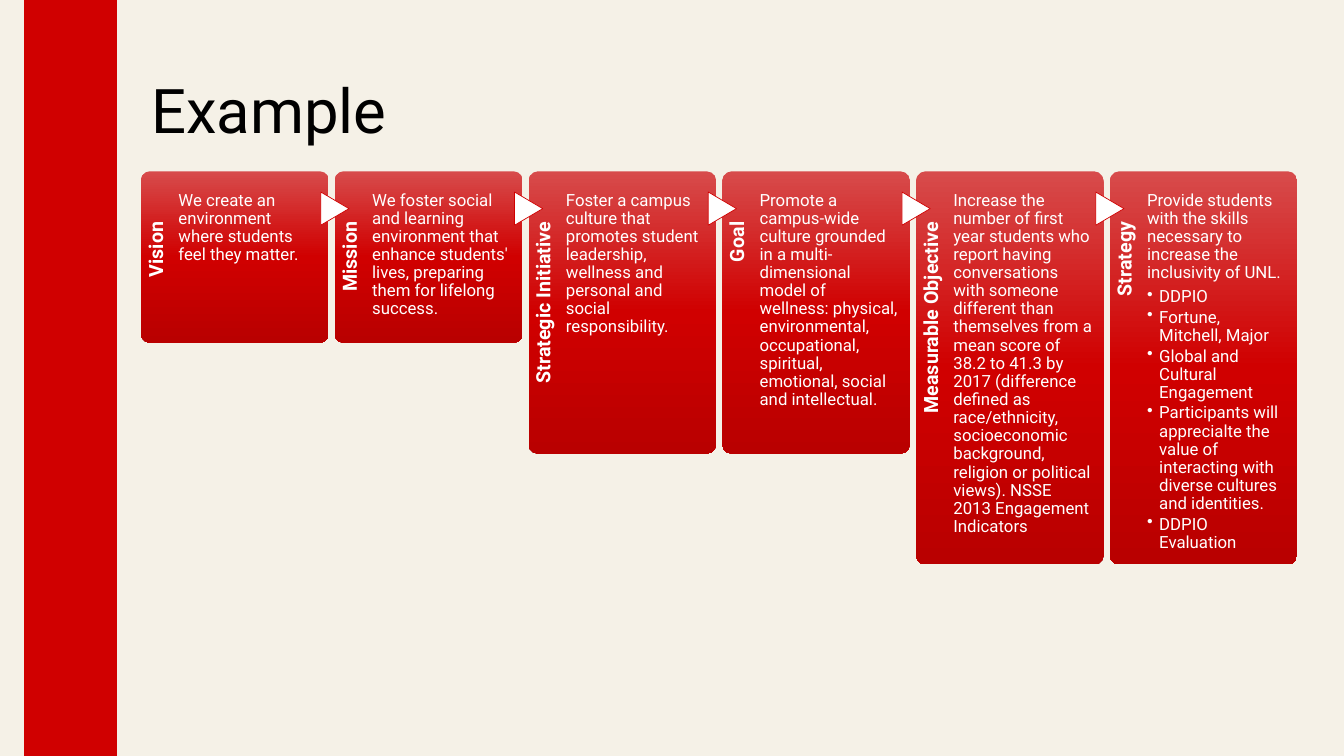
import copy
from dataclasses import dataclass

import lxml.etree
import pptx
import pptx.dml.color
import pptx.enum.shapes
import pptx.enum.text
import pptx.oxml.ns
import pptx.util

Inches = pptx.util.Inches
SHAPES = pptx.enum.shapes.MSO_SHAPE
ALIGN = pptx.enum.text.PP_ALIGN
ANCHOR = pptx.enum.text.MSO_ANCHOR


@dataclass(frozen=True)
class Theme:
    font: str = "Roboto"
    cream: str = "F5F1E7"
    red: str = "D00000"
    white: str = "FFFFFF"
    black: str = "000000"
    card_gradient: tuple = ((0, "D74B4B"), (0.5, "D00000"), (1, "B90000"))
    title_size: int = 44
    label_size: int = 14
    body_size: int = 12


THEME = Theme()

# Card row: left edge, top, width and distance between cards
ROW_LEFT, ROW_TOP, CARD_WIDTH, CARD_STEP = 1.4, 1.7, 1.86, 1.922

# Label, card height, text, bullets
CARDS = [
    ("Vision", 1.7, "We create an environment where students feel they matter.", []),
    ("Mission", 1.7, "We foster social and learning environment that enhance students' lives, "
     "preparing them for lifelong success.", []),
    ("Strategic Initiative", 2.8, "Foster a campus culture that promotes student leadership, "
     "wellness and personal and social responsibility.", []),
    ("Goal", 2.8, "Promote a campus-wide culture grounded in a multi-dimensional model of "
     "wellness: physical, environmental, occupational, spiritual, emotional, social and "
     "intellectual.", []),
    ("Measurable Objective", 3.9, "Increase the number of first year students who report having "
     "conversations with someone different than themselves from a mean score of 38.2 to 41.3 by "
     "2017 (difference defined as race/ethnicity, socioeconomic background, religion or "
     "political views). NSSE 2013 Engagement Indicators", []),
    ("Strategy", 3.9, "Provide students with the skills necessary to increase the inclusivity "
     "of UNL.", [
         "DDPIO",
         "Fortune, Mitchell, Major",
         "Global and Cultural Engagement",
         "Participants will apprecialte the value of interacting with diverse cultures and "
         "identities.",
         "DDPIO Evaluation",
     ]),
]


def rgb(value):
    return pptx.dml.color.RGBColor.from_string(value)


def set_values(target, values):
    for name, value in values.items():
        setattr(target, name, value)


def add_shape(slide, kind, left, top, width, height, fill=None):
    shape = slide.shapes.add_shape(
        kind, Inches(left), Inches(top), Inches(width), Inches(height))
    shape.shadow.inherit = False
    shape.line.fill.background()
    if fill:
        shape.fill.solid()
        shape.fill.fore_color.rgb = rgb(fill)
    return shape


def add_text_box(slide, left, top, width, height, margins, anchor=ANCHOR.TOP):
    box = slide.shapes.add_textbox(
        Inches(left), Inches(top), Inches(width), Inches(height))
    names = ("margin_left", "margin_top", "margin_right", "margin_bottom")
    set_values(box.text_frame, {
        "word_wrap": True,
        "vertical_anchor": anchor,
        **{name: Inches(margin) for name, margin in zip(names, margins)},
    })
    return box


def format_paragraph(paragraph, text, size, color=THEME.white, bold=False,
                     align=ALIGN.LEFT, space_after=0):
    paragraph.text = text
    set_values(paragraph, {
        "alignment": align,
        "line_spacing": 0.9,
        "space_after": pptx.util.Pt(space_after),
    })
    set_values(paragraph.font, {
        "name": THEME.font, "size": pptx.util.Pt(size), "bold": bold})
    paragraph.font.color.rgb = rgb(color)


def add_bullet(paragraph):
    properties = paragraph._p.get_or_add_pPr()
    indent = Inches(0.12)
    properties.set("marL", str(indent))
    properties.set("indent", str(-indent))
    bullet = lxml.etree.SubElement(properties, pptx.oxml.ns.qn("a:buChar"))
    bullet.set("char", "•")


def add_card_panel(slide, left, height):
    panel = add_shape(slide, SHAPES.ROUNDED_RECTANGLE, left, ROW_TOP, CARD_WIDTH, height)
    panel.adjustments[0] = 0.05
    panel.fill.gradient()
    panel.fill.gradient_angle = 270
    # A new gradient has two stops; the panel needs a third
    last_stop = panel.fill._fill._gradFill.gsLst[-1]
    last_stop.addnext(copy.deepcopy(last_stop))
    for stop, (position, color) in zip(panel.fill.gradient_stops, THEME.card_gradient):
        stop.position = position
        stop.color.rgb = rgb(color)


def add_card_label(slide, left, card_height, text):
    length, thickness = card_height * 0.82, 0.37
    box = add_text_box(
        slide, left + (thickness - length) / 2, ROW_TOP + (length - thickness) / 2,
        length, thickness, (0, 0.05, 0.5, 0))
    box.rotation = 270
    format_paragraph(box.text_frame.paragraphs[0], text, THEME.label_size,
                     bold=True, align=ALIGN.RIGHT)


def add_arrow(slide, left):
    width, height = 0.33, 0.28
    arrow = add_shape(slide, SHAPES.FLOWCHART_EXTRACT, left - width / 2, 1.93,
                      width, height, THEME.white)
    arrow.rotation = 90
    arrow.line.color.rgb = rgb(THEME.red)
    arrow.line.width = pptx.util.Pt(0.5)


def add_card_text(slide, left, height, text, bullets):
    frame = add_text_box(slide, left + 0.37, ROW_TOP, 1.38, height,
                         (0, 0.2, 0, 0)).text_frame
    format_paragraph(frame.paragraphs[0], text, THEME.body_size, space_after=4.2)
    for bullet in bullets:
        paragraph = frame.add_paragraph()
        paragraph.level = 1
        add_bullet(paragraph)
        format_paragraph(paragraph, bullet, THEME.body_size, space_after=1.8)


def main():
    presentation = pptx.Presentation()
    presentation.slide_width = Inches(13.333)
    presentation.slide_height = Inches(7.5)
    slide = presentation.slides.add_slide(presentation.slide_layouts[6])

    # Background and side band
    slide.background.fill.solid()
    slide.background.fill.fore_color.rgb = rgb(THEME.cream)
    add_shape(slide, SHAPES.RECTANGLE, 0.24, 0, 0.92, 7.5, THEME.red)

    # Row of cards, with an arrow leading into each one after the first
    for index, (label, height, text, bullets) in enumerate(CARDS):
        left = ROW_LEFT + index * CARD_STEP
        add_card_panel(slide, left, height)
        add_card_label(slide, left, height, label)
        if index:
            add_arrow(slide, left)
        add_card_text(slide, left, height, text, bullets)

    # Title
    title = add_text_box(slide, 1.4, 0.4, 11.01, 1.45, (0.1, 0.05, 0.1, 0.05), ANCHOR.MIDDLE)
    format_paragraph(title.text_frame.paragraphs[0], "Example", THEME.title_size, THEME.black)

    presentation.save("out.pptx")


if __name__ == "__main__":
    main()
